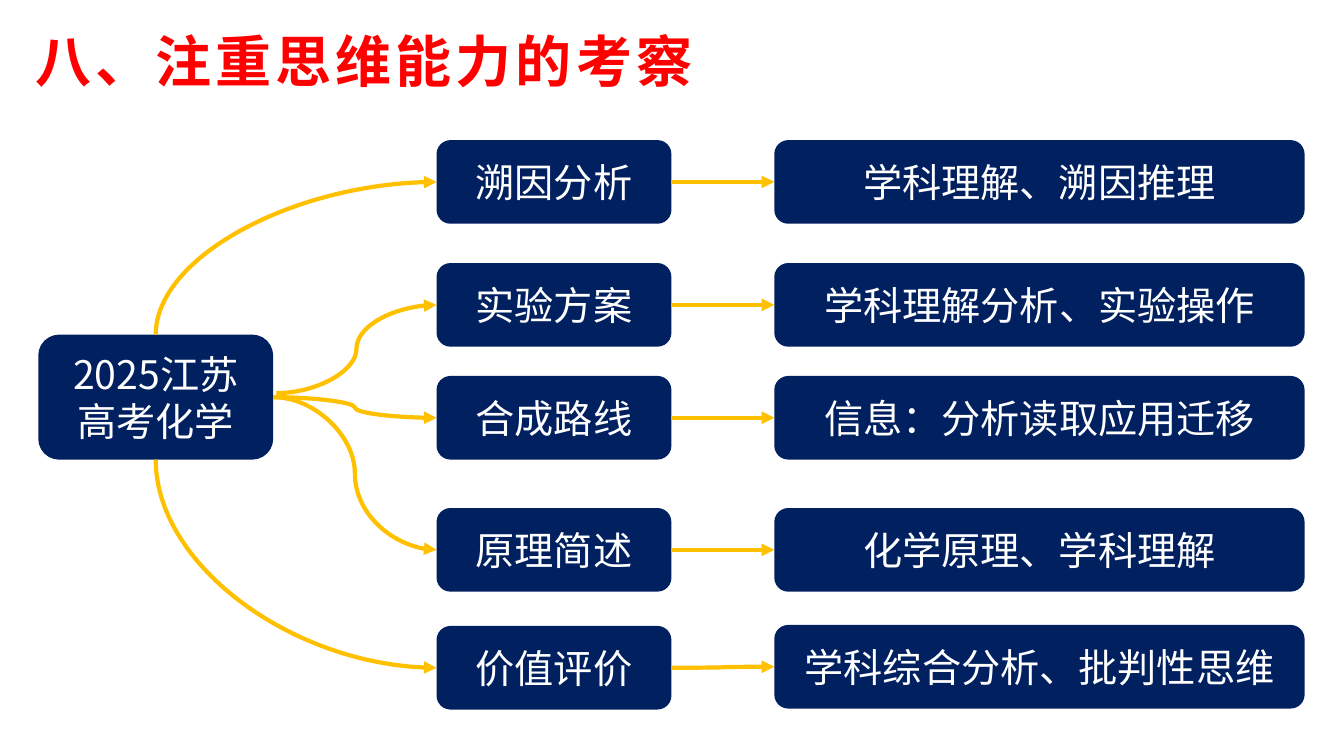
from lxml.etree import SubElement
from pptx import Presentation
from pptx.dml.color import RGBColor
from pptx.enum.shapes import MSO_CONNECTOR, MSO_SHAPE
from pptx.enum.text import MSO_ANCHOR, PP_ALIGN
from pptx.oxml.ns import qn
from pptx.util import Inches, Pt

# Content: topic, its ability, top of the topic box, top of the ability box
TITLE = "八、注重思维能力的考察"
ROOT_LINES = ["2025江苏", "高考化学"]
ROWS = [
    ("溯因分析", "学科理解、溯因推理", 1.39, 1.39),
    ("实验方案", "学科理解分析、实验操作", 2.61, 2.61),
    ("合成路线", "信息：分析读取应用迁移", 3.73, 3.73),
    ("原理简述", "化学原理、学科理解", 5.04, 5.04),
    ("价值评价", "学科综合分析、批判性思维", 6.21, 6.20),
]

THEME = {
    "font": "Noto Sans CJK SC",
    "box": RGBColor(0x00, 0x20, 0x60),
    "box_text": RGBColor(0xFF, 0xFF, 0xFF),
    "arrow": RGBColor(0xFF, 0xC0, 0x00),
    "title": RGBColor(0xFF, 0x00, 0x00),
    "box_size": Pt(28),
    "title_size": Pt(40),
    "arrow_width": Pt(3),
}
BOX_FORMAT = {"name": THEME["font"], "size": THEME["box_size"], "bold": False}
TITLE_FORMAT = {"name": THEME["font"], "size": THEME["title_size"], "bold": True}

# Layout in inches
ROOT_LEFT, ROOT_TOP, ROOT_WIDTH, ROOT_HEIGHT = 0.38, 3.32, 2.33, 1.24
TOPIC_LEFT, TOPIC_WIDTH = 4.33, 2.33
ABILITY_LEFT, ABILITY_WIDTH = 7.68, 5.26
ROW_HEIGHT = 0.83
ROOT_RIGHT = ROOT_LEFT + ROOT_WIDTH
ROOT_CENTER = ROOT_LEFT + ROOT_WIDTH / 2
ROOT_MIDDLE = ROOT_TOP + ROOT_HEIGHT / 2


def write_lines(shape, lines, text_format, color, alignment):
    frame = shape.text_frame
    frame.word_wrap = True
    frame.vertical_anchor = MSO_ANCHOR.MIDDLE
    for index, line in enumerate(lines):
        paragraph = frame.add_paragraph() if index else frame.paragraphs[0]
        paragraph.alignment = alignment
        run = paragraph.add_run()
        run.text = line
        for name, value in text_format.items():
            setattr(run.font, name, value)
        run.font.color.rgb = color
        properties = run.font._element
        SubElement(properties, qn("a:ea")).set("typeface", THEME["font"])
    return frame


def add_box(slide, lines, left, top, width, height):
    shape = slide.shapes.add_shape(
        MSO_SHAPE.ROUNDED_RECTANGLE, *map(Inches, (left, top, width, height)))
    shape.shadow.inherit = False
    shape.fill.solid()
    shape.fill.fore_color.rgb = THEME["box"]
    shape.line.fill.background()
    write_lines(shape, lines, BOX_FORMAT, THEME["box_text"], PP_ALIGN.CENTER)


def add_arrow(slide, start, end, quarter_turn=False):
    """Draw an S curve, or a quarter arc that leaves its start vertically."""
    (x1, y1), (x2, y2) = start, end
    if quarter_turn:
        center_x, center_y = (x1 + x2) / 2, (y1 + y2) / 2
        half_x, half_y = (x2 - x1) / 2, (y2 - y1) / 2
        x1, y1 = center_x + half_y, center_y - half_x
        x2, y2 = center_x - half_y, center_y + half_x
    connector = slide.shapes.add_connector(
        MSO_CONNECTOR.CURVE, *map(Inches, (x1, y1, x2, y2)))
    connector.line.color.rgb = THEME["arrow"]
    connector.line.width = THEME["arrow_width"]
    properties = connector._element.spPr
    if quarter_turn:
        properties.find(qn("a:xfrm")).set("rot", str(270 * 60000))
        properties.find(qn("a:prstGeom")).set("prst", "curvedConnector2")
    SubElement(properties.find(qn("a:ln")), qn("a:tailEnd")).set("type", "triangle")
    SubElement(properties, qn("a:effectLst"))


def main():
    presentation = Presentation()
    presentation.slide_width = Inches(13.33)
    presentation.slide_height = Inches(7.5)
    slide = presentation.slides.add_slide(presentation.slide_layouts[6])

    # Boxes
    add_box(slide, ROOT_LINES, ROOT_LEFT, ROOT_TOP, ROOT_WIDTH, ROOT_HEIGHT)
    for topic, ability, topic_top, ability_top in ROWS:
        add_box(slide, [topic], TOPIC_LEFT, topic_top, TOPIC_WIDTH, ROW_HEIGHT)
        add_box(slide, [ability], ABILITY_LEFT, ability_top, ABILITY_WIDTH, ROW_HEIGHT)

    # Arrows: outer topics leave the root's top and bottom, inner ones its right side
    starts = [
        (ROOT_CENTER, ROOT_TOP),
        (ROOT_RIGHT + 0.03, ROOT_MIDDLE - 0.04),
        (ROOT_RIGHT, ROOT_MIDDLE),
        (ROOT_RIGHT, ROOT_MIDDLE),
        (ROOT_CENTER, ROOT_TOP + ROOT_HEIGHT),
    ]
    for start, (_, _, topic_top, ability_top) in zip(starts, ROWS):
        topic_middle = topic_top + ROW_HEIGHT / 2
        ability_middle = ability_top + ROW_HEIGHT / 2
        add_arrow(slide, start, (TOPIC_LEFT, topic_middle),
                  quarter_turn=start[0] == ROOT_CENTER)
        add_arrow(slide, (TOPIC_LEFT + TOPIC_WIDTH, topic_middle),
                  (ABILITY_LEFT, ability_middle))

    # Title
    title = slide.shapes.add_textbox(*map(Inches, (0.25, 0, 10.31, 1.19)))
    frame = write_lines(title, [TITLE], TITLE_FORMAT, THEME["title"], PP_ALIGN.LEFT)
    frame.paragraphs[0].runs[0].font._element.set("spc", "300")

    presentation.save("out.pptx")


if __name__ == "__main__":
    main()
